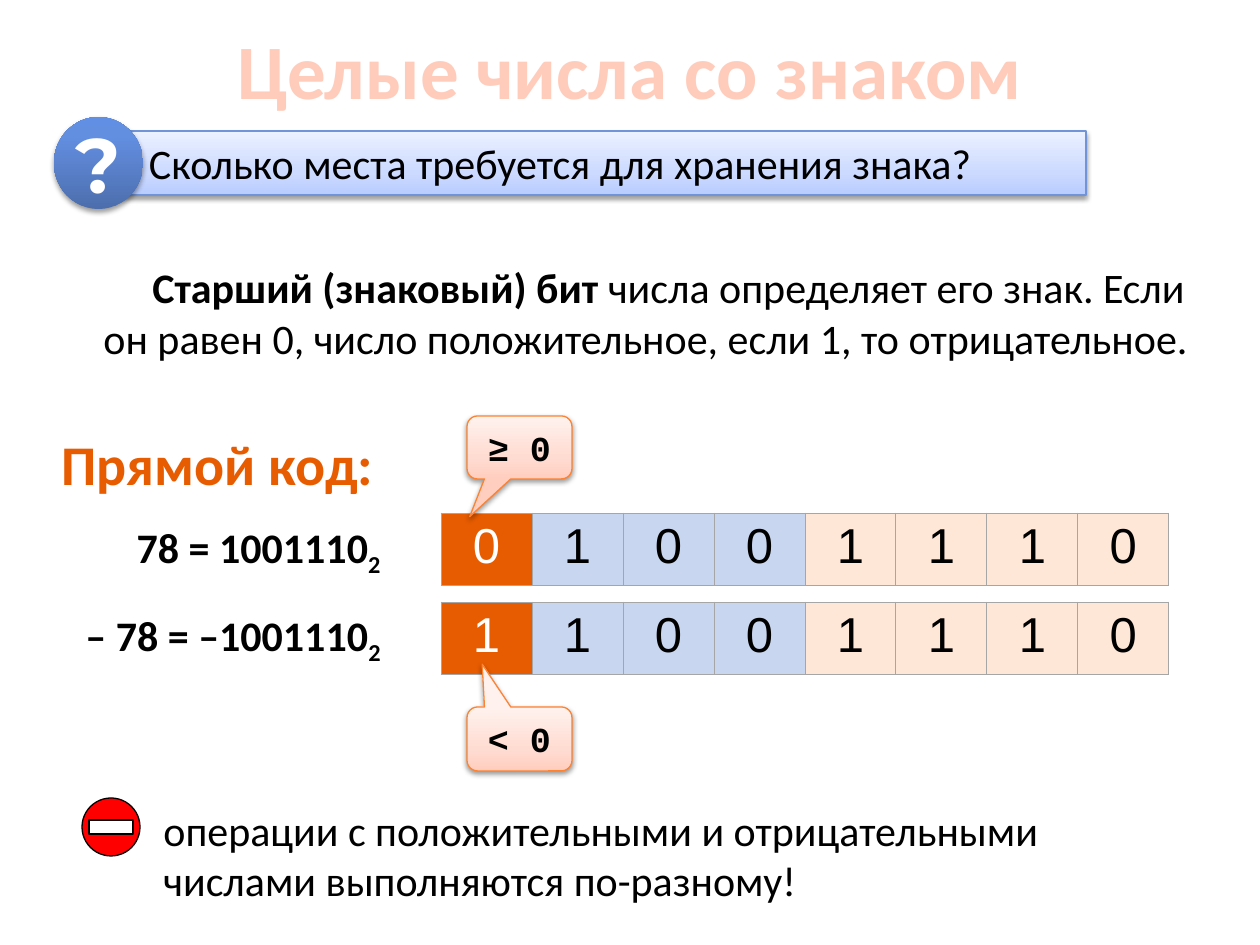
from dataclasses import dataclass

from lxml.etree import SubElement
from pptx import Presentation
from pptx.dml.color import RGBColor
from pptx.enum.shapes import MSO_SHAPE as Preset
from pptx.enum.text import MSO_ANCHOR as Anchor, PP_ALIGN as Align
from pptx.oxml.ns import qn
from pptx.util import Emu, Pt

COLORS = {
    "black": "000000", "white": "FFFFFF", "title": "FFCCBB",
    "orange": "E75C01", "blue cell": "C8D6F0", "peach cell": "FFE7D7",
    "grid": "A6A6A6", "red": "FF0000",
    "banner line": "7094D7", "callout line": "FD8231",
}
GRADIENTS = {
    "banner": ((0, "B8CCFF"), (35, "CCDAFF"), (100, "EBF1FF")),
    "badge": ((0, "4C6EAD"), (80, "638FE1"), (100, "618FE4")),
    "callout": ((0, "FFCEBF"), (35, "FFDCD2"), (100, "FFF2EE")),
}
CELL_FILLS = ["orange"] + ["blue cell"] * 3 + ["peach cell"] * 4
CELL_WIDTH, ROW_HEIGHT, TABLE_LEFT = 91, 72, 441


@dataclass(frozen=True)
class Box:
    left: int
    top: int
    width: int
    height: int

    def emu(self) -> list[Emu]:
        return [px(side) for side in (self.left, self.top, self.width, self.height)]


@dataclass(frozen=True)
class Code:
    label: str
    label_box: Box
    bits: str
    table_top: int
    sign: str
    callout_box: Box
    pointer: tuple[float, float]


CODES = [
    Code("78 = 1001110", Box(96, 515, 297, 64), "01001110", 513,
         "≥ 0", Box(467, 416, 105, 63), (-0.474, 1.098)),
    Code("– 78 = –1001110", Box(36, 603, 357, 64), "11001110", 602,
         "< 0", Box(467, 707, 105, 64), (-0.355, -1.169)),
]


def px(length: int) -> Emu:
    return Emu(round(length * 914400 / 126))


def rgb(name: str) -> RGBColor:
    return RGBColor.from_string(COLORS[name])


def write(para, text: str, *, size: int = 24, color: str = "black",
          font: str = "Calibri", bold: bool = False, align=Align.LEFT,
          subscript: bool = False) -> None:
    para.alignment = align
    span = para.add_run()
    span.text = text
    span.font.size = Pt(size)
    span.font.name = font
    span.font.bold = bold
    span.font.color.rgb = rgb(color)
    if subscript:
        span._r.get_or_add_rPr().set("baseline", "-25000")


def add_text_box(page, box: Box, *, wrap: bool = True, anchor=Anchor.TOP):
    frame = page.shapes.add_textbox(*box.emu()).text_frame
    frame.word_wrap = wrap
    frame.vertical_anchor = anchor
    return frame.paragraphs[0]


def add_preset(shapes, preset, box: Box, *, line: str | None = None):
    shape = shapes.add_shape(preset, *box.emu())
    shape.shadow.inherit = False
    if line:
        shape.line.color.rgb = rgb(line)
        shape.line.width = Pt(0.75)
    else:
        shape.line.fill.background()
    shape.text_frame.word_wrap = True
    shape.text_frame.vertical_anchor = Anchor.MIDDLE
    return shape


def add_flat(shapes, preset, box: Box, color: str) -> None:
    shape = add_preset(shapes, preset, box, line="black")
    shape.fill.solid()
    shape.fill.fore_color.rgb = rgb(color)


def add_glossy(shapes, preset, box: Box, gradient: str, *, line: str | None = None):
    shape = add_preset(shapes, preset, box, line=line)
    shape.fill.gradient()
    shape.fill.gradient_angle = 90
    properties = shape._element.spPr
    stops = properties.find(qn("a:gradFill")).find(qn("a:gsLst"))
    for stop in list(stops):
        stops.remove(stop)
    for position, color in GRADIENTS[gradient]:
        stop = SubElement(stops, qn("a:gs"), pos=str(position * 1000))
        SubElement(stop, qn("a:srgbClr"), val=color)
    shadow = SubElement(properties.find(qn("a:effectLst")), qn("a:outerShdw"),
                        blurRad=str(Pt(3.1)), dist=str(Pt(1.6)),
                        dir="5400000", rotWithShape="0")
    shade = SubElement(shadow, qn("a:srgbClr"), val=COLORS["black"])
    SubElement(shade, qn("a:alpha"), val="38000")
    return shape


def add_bits(page, bits: str, top: int) -> None:
    box = Box(TABLE_LEFT, top, CELL_WIDTH * len(bits), ROW_HEIGHT)
    table = page.shapes.add_table(1, len(bits), *box.emu()).table
    table.first_row = table.horz_banding = False
    for column, (bit, fill) in enumerate(zip(bits, CELL_FILLS)):
        table.columns[column].width = px(CELL_WIDTH)
        cell = table.cell(0, column)
        properties = cell._tc.get_or_add_tcPr()
        for side in ("lnL", "lnR", "lnT", "lnB"):
            border = SubElement(properties, qn(f"a:{side}"), w=str(Pt(0.5)))
            paint = SubElement(border, qn("a:solidFill"))
            SubElement(paint, qn("a:srgbClr"), val=COLORS["grid"])
        cell.fill.solid()
        cell.fill.fore_color.rgb = rgb(fill)
        write(cell.text_frame.paragraphs[0], bit, size=28, font="Arial",
              color="white" if column == 0 else "black", align=Align.CENTER)


def add_code(page, code: Code) -> None:
    para = add_text_box(page, code.label_box, wrap=False)
    write(para, code.label, bold=True, align=Align.RIGHT)
    write(para, "2", bold=True, align=Align.RIGHT, subscript=True)
    add_bits(page, code.bits, code.table_top)


def add_sign(page, code: Code) -> None:
    callout = add_glossy(page.shapes, Preset.ROUNDED_RECTANGULAR_CALLOUT,
                         code.callout_box, "callout", line="callout line")
    for index, value in enumerate((*code.pointer, 0.167)):
        callout.adjustments[index] = value
    write(callout.text_frame.paragraphs[0], code.sign, size=20,
          font="Courier New", bold=True, align=Align.CENTER)


def add_question(page) -> None:
    shapes = page.shapes.add_group_shape().shapes
    banner = add_glossy(shapes, Preset.RECTANGLE, Box(118, 131, 968, 64),
                        "banner", line="banner line")
    banner.text_frame.margin_left = px(31)
    write(banner.text_frame.paragraphs[0],
          "Сколько места требуется для хранения знака?")
    badge = add_glossy(shapes, Preset.OVAL, Box(54, 117, 89, 92), "badge")
    badge.text_frame.word_wrap = False
    write(badge.text_frame.paragraphs[0], "?", size=44, font="Montserrat",
          color="white", bold=True, align=Align.CENTER)


def add_warning(page) -> None:
    shapes = page.shapes.add_group_shape().shapes
    add_flat(shapes, Preset.OVAL, Box(82, 798, 58, 58), "red")
    add_flat(shapes, Preset.RECTANGLE, Box(89, 820, 44, 14), "white")
    write(add_text_box(page, Box(151, 798, 911, 118)),
          "операции с положительными и отрицательными числами выполняются по-разному!")


def main() -> None:
    deck = Presentation()
    deck.slide_width, deck.slide_height = px(1260), px(945)
    page = deck.slides.add_slide(deck.slide_layouts[5])
    title = page.shapes.title
    title.left, title.top, title.width, title.height = Box(63, -10, 1134, 157).emu()
    title.text_frame.vertical_anchor = Anchor.MIDDLE
    write(title.text_frame.paragraphs[0], "Целые числа со знаком", size=44,
          color="title", bold=True, align=Align.CENTER)
    add_question(page)
    rule = add_text_box(page, Box(91, 228, 1130, 168), anchor=Anchor.MIDDLE)
    rule._p.get_or_add_pPr().set("indent", str(px(49)))
    write(rule, "Старший (знаковый) бит ", bold=True)
    write(rule, "числа определяет его знак. Если он равен 0, "
                "число положительное, если 1, то отрицательное.")
    write(add_text_box(page, Box(49, 423, 340, 81), wrap=False), "Прямой код:",
          size=32, color="orange", bold=True)
    for code in CODES:
        add_code(page, code)
    for code in CODES:
        add_sign(page, code)
    add_warning(page)
    deck.save("out.pptx")


if __name__ == "__main__":
    main()
